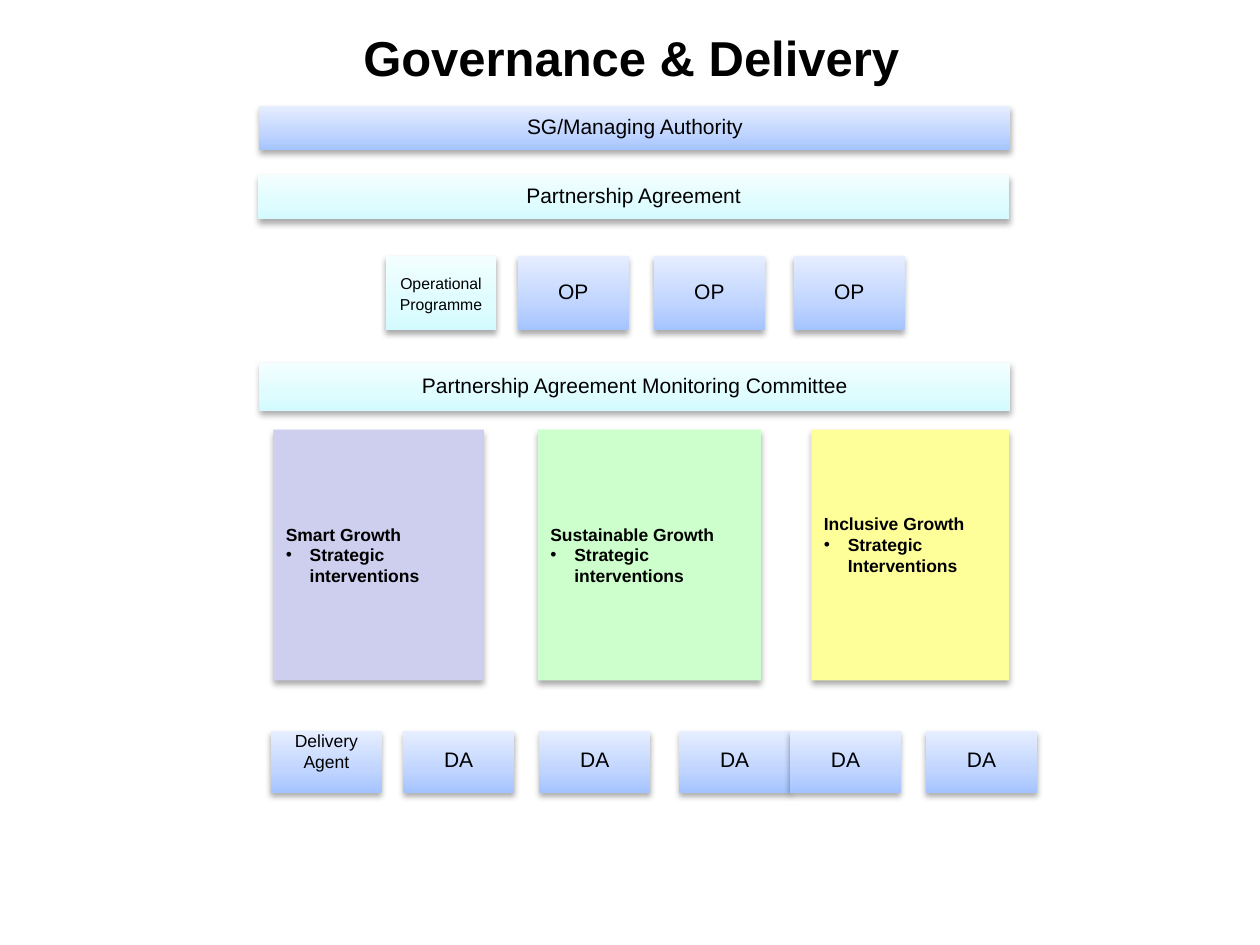
from collections import namedtuple
from copy import deepcopy

from lxml.etree import SubElement
from pptx import Presentation
from pptx.dml.color import RGBColor
from pptx.enum.shapes import MSO_SHAPE as Shape
from pptx.enum.text import MSO_ANCHOR as Anchor, PP_ALIGN as Align
from pptx.oxml.ns import qn
from pptx.util import Inches, Pt

Box = namedtuple("Box", "left top width height")

BLACK = RGBColor(0x00, 0x00, 0x00)
LILAC = RGBColor(0xCE, 0xCE, 0xEF)
GREEN = RGBColor(0xCC, 0xFF, 0xCC)
YELLOW = RGBColor(0xFF, 0xFF, 0x99)
AQUA = (RGBColor(0xD3, 0xFB, 0xFF), RGBColor(0xDF, 0xFC, 0xFF), RGBColor(0xF2, 0xFE, 0xFF))
BLUE = (RGBColor(0xA4, 0xC4, 0xFF), RGBColor(0xBF, 0xD4, 0xFF), RGBColor(0xE6, 0xEE, 0xFF))

FONT = "Arial"
SLIDE_WIDTH, SLIDE_HEIGHT = Inches(10), Inches(7.5)
COLUMN, ROW = SLIDE_WIDTH / 100, SLIDE_HEIGHT / 75
TILE_WIDTH = 8.8
TILE_STARTS = (0, 10.5, 21.3, 32.4, 41.2, 52)
LINE = Pt(12)


def on_grid(box):
    return (round(box.left * COLUMN), round(box.top * ROW),
            round(box.width * COLUMN), round(box.height * ROW))


def paint_gradient(shape, colors):
    shape.fill.gradient()
    shape.fill.gradient_angle = 90
    stop_list = shape.element.spPr.find(".//" + qn("a:gsLst"))
    stop_list.append(deepcopy(stop_list[0]))
    for stop, color, position in zip(shape.fill.gradient_stops, colors, (0, 0.35, 1)):
        stop.color.rgb = color
        stop.position = position


def add_shadow(shape):
    shape.shadow.inherit = False
    effects = shape.element.spPr.find(qn("a:effectLst"))
    shadow = SubElement(effects, qn("a:outerShdw"), blurRad=str(Pt(3.5)),
                        dist=str(Pt(2.2)), dir="5400000", rotWithShape="0")
    color = SubElement(shadow, qn("a:srgbClr"), val=str(BLACK))
    SubElement(color, qn("a:alpha"), val="32000")


def write(para, text, size, bold=False, align=Align.CENTER):
    para.text = text
    para.alignment = align
    para.font.name = FONT
    para.font.size = Pt(size)
    para.font.bold = bold
    para.font.color.rgb = BLACK


def add_panel(page, box, fill):
    panel = page.shapes.add_shape(Shape.RECTANGLE, *on_grid(box))
    if isinstance(fill, RGBColor):
        panel.fill.solid()
        panel.fill.fore_color.rgb = fill
    else:
        paint_gradient(panel, fill)
    panel.line.fill.background()
    add_shadow(panel)
    panel.text_frame.word_wrap = True
    panel.text_frame.vertical_anchor = Anchor.MIDDLE
    return panel.text_frame


def add_title(page, box, text):
    frame = page.shapes.add_textbox(*on_grid(box)).text_frame
    frame.word_wrap = True
    frame.vertical_anchor = Anchor.MIDDLE
    write(frame.paragraphs[0], text, 28, bold=True)


def add_label(page, box, fill, text, size=12):
    frame = add_panel(page, box, fill)
    para = frame.paragraphs[0]
    para.line_spacing = LINE
    write(para, text, size)
    return frame


def add_tile_row(page, box, labels, first_fill, first_size):
    frames = []
    for index, (start, label) in enumerate(zip(TILE_STARTS, labels)):
        tile = Box(box.left + start, box.top, TILE_WIDTH, box.height)
        fill, size = (BLUE, 12) if index else (first_fill, first_size)
        frames.append(add_label(page, tile, fill, label, size))
    return frames


def add_growth_card(page, box, fill, heading, item):
    frame = add_panel(page, box, fill)
    bullet = frame.add_paragraph()
    properties = bullet._p.get_or_add_pPr()
    properties.set("marL", str(Inches(0.19)))
    properties.set("indent", str(-Inches(0.19)))
    for para, text in zip(frame.paragraphs, (heading, item)):
        para.line_spacing = LINE
    SubElement(properties, qn("a:buFont"), typeface=FONT)
    SubElement(properties, qn("a:buChar"), char="•")
    for para, text in zip(frame.paragraphs, (heading, item)):
        write(para, text, 10, bold=True, align=Align.LEFT)
    return frame


def main():
    deck = Presentation()
    deck.slide_width, deck.slide_height = SLIDE_WIDTH, SLIDE_HEIGHT
    page = deck.slides.add_slide(deck.slide_layouts[6])

    add_title(page, Box(5.1, 0.3, 90, 8.5), "Governance & Delivery")
    add_label(page, Box(20.5, 13.9, 59.6, 3.5), AQUA, "Partnership Agreement")
    add_label(page, Box(20.6, 28.8, 59.6, 3.8), AQUA,
              "Partnership Agreement Monitoring Committee")
    add_tile_row(page, Box(30.6, 20.3, 41.2, 5.9),
                 ["Operational Programme"] + ["OP"] * 3, AQUA, 9)
    add_label(page, Box(20.6, 8.4, 59.6, 3.5), BLUE, "SG/Managing Authority")

    add_growth_card(page, Box(21.7, 34.1, 16.7, 19.9), LILAC,
                    "Smart Growth", "Strategic interventions")
    add_growth_card(page, Box(42.7, 34.1, 17.7, 19.9), GREEN,
                    "Sustainable Growth", "Strategic interventions")
    inclusive = add_growth_card(page, Box(64.4, 34.1, 15.7, 19.9), YELLOW,
                                "Inclusive Growth", "Strategic Interventions")
    agents = add_tile_row(page, Box(21.5, 58, 60.8, 4.9),
                          ["Delivery Agent"] + ["DA"] * 5, BLUE, 10)
    for frame in (inclusive, agents[0]):
        frame.margin_bottom += LINE

    deck.save("out.pptx")


if __name__ == "__main__":
    main()
